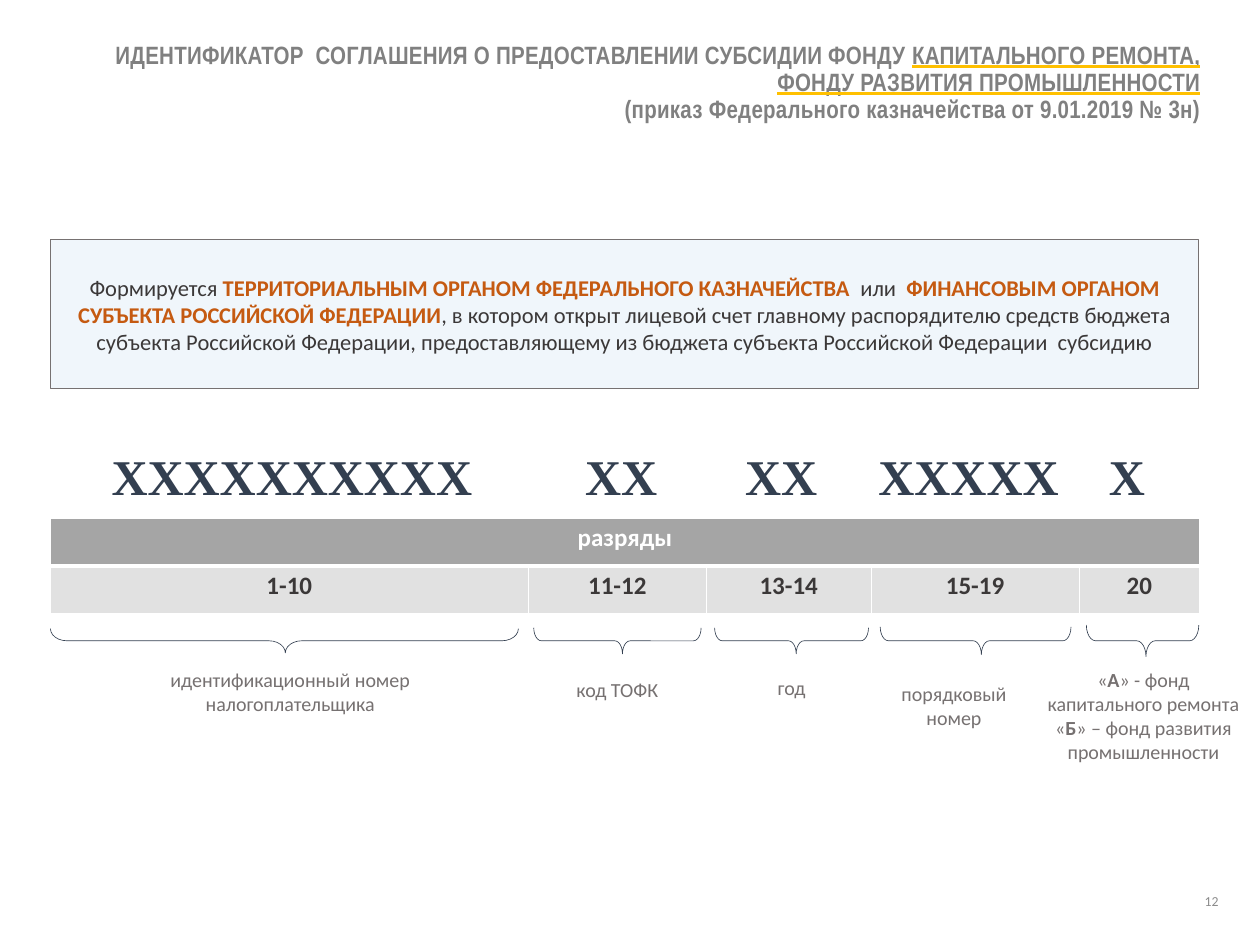
from copy import deepcopy

from lxml import etree
from pptx import Presentation, util as u
from pptx.dml.color import RGBColor
from pptx.enum import shapes, text
from pptx.oxml import ns

WIDTH, HEIGHT = 14, 10.5
LEFT = 0.56
BRACE_MIDDLE = 7.12
COLORS = {
    "title": "808080", "underline": "FFC000", "label": "767171",
    "number": "8C8C8C", "body": "3B3838", "accent": "C55A11",
    "panel": "DEEBF7", "code": "333F50", "header": "A5A5A5",
    "cell": "E1E1E1", "white": "FFFFFF",
}
COLUMNS = [
    (5.31, "1-10", (0.56, 5.2, 0.27, 0.678, 0.498)),
    (1.98, "11-12", (5.93, 1.86, 0.29, 0.294, 0.47)),
    (1.83, "13-14", (7.94, 1.71, 0.29, 0.294, 0.47)),
    (2.31, "15-19", (9.78, 2.12, 0.31, 0.294, 0.47)),
    (1.34, "20", (12.07, 1.25, 0.35, 0.294, 0.47)),
]
CODE_STOPS = [
    (0.56, "ХХХХХХХХХХ"), (5.82, "ХХ"), (7.6, "ХХ"),
    (9.08, "ХХХХХ"), (11.64, "Х"),
]
LABELS = [
    ((0.95, 7.36, 4.55, 0.66), [[("идентификационный номер налогоплательщика", False)]]),
    ((5.93, 7.47, 1.86, 0.39), [[("код ТОФК", False)]]),
    ((8.04, 7.45, 1.51, 0.39), [[("год", False)]]),
    ((9.79, 7.51, 1.62, 0.93), [[("порядковый", False)], [("номер", False)]]),
    ((11.41, 7.36, 2.59, 1.2), [
        [("«", False), ("А", True), ("» - фонд капитального ремонта", False)],
        [("«", False), ("Б", True), ("» – фонд развития промышленности", False)],
    ]),
]


def rgb(name):
    return RGBColor.from_string(COLORS[name])


def inches(*lengths):
    return [u.Inches(length) for length in lengths]


def add_child(parent, tag, **attributes):
    return etree.SubElement(parent, ns.qn(tag), attributes)


def add_solid(parent, color):
    add_child(add_child(parent, "a:solidFill"), "a:srgbClr", val=COLORS[color])


def add_span(para, words, size, color, bold=False, font="Calibri"):
    span = para.add_run()
    span.text = words
    span.font.size = u.Pt(size)
    span.font.name = font
    span.font.bold = bold
    span.font.color.rgb = rgb(color)
    return span


def set_frame(box, anchor=text.MSO_ANCHOR.TOP):
    frame = box.text_frame
    frame.word_wrap = True
    frame.vertical_anchor = anchor
    frame.margin_left = frame.margin_right = u.Inches(0.12)
    frame.margin_top = frame.margin_bottom = u.Inches(0.06)
    return frame


def add_title(page):
    title = page.shapes.title
    title.left, title.top, title.width, title.height = inches(0.63, 0.39, 12.83, 1.08)
    frame = set_frame(title, text.MSO_ANCHOR.MIDDLE)
    frame.auto_size = text.MSO_AUTO_SIZE.NONE
    para = frame.paragraphs[0]
    para.alignment = text.PP_ALIGN.RIGHT
    para.line_spacing = 0.9
    lines = [
        ("ИДЕНТИФИКАТОР  СОГЛАШЕНИЯ О ПРЕДОСТАВЛЕНИИ СУБСИДИИ ФОНДУ ", False),
        ("КАПИТАЛЬНОГО РЕМОНТА, ФОНДУ РАЗВИТИЯ ПРОМЫШЛЕННОСТИ", True),
        ("(приказ Федерального казначейства от 9.01.2019 № 3н)", False),
    ]
    for words, underlined in lines:
        span = add_span(para, words, 20, "title", True, "Arial Narrow")
        span.font.underline = underlined
        properties = span.font._element
        properties.set("spc", "20")
        if underlined:
            fill = etree.Element(ns.qn("a:uFill"))
            add_solid(fill, "underline")
            properties.find(ns.qn("a:latin")).addprevious(fill)
            para.add_line_break()
            para._p[-1].append(deepcopy(properties))


def add_panel(page):
    panel = page.shapes.add_shape(
        shapes.MSO_SHAPE.RECTANGLE, *inches(LEFT, 2.66, 12.76, 1.66))
    panel.shadow.inherit = False
    panel.fill.solid()
    panel.fill.fore_color.rgb = rgb("panel")
    color = panel._element.spPr.find(ns.qn("a:solidFill"))[0]
    add_child(color, "a:alpha", val="44000")
    panel.line.color.rgb = rgb("label")
    panel.line.width = u.Pt(1)
    para = set_frame(panel, text.MSO_ANCHOR.MIDDLE).paragraphs[0]
    para.alignment = text.PP_ALIGN.CENTER
    for words, accent in [
        ("Формируется ", False),
        ("ТЕРРИТОРИАЛЬНЫМ ОРГАНОМ ФЕДЕРАЛЬНОГО КАЗНАЧЕЙСТВА  ", True),
        ("или  ", False),
        ("ФИНАНСОВЫМ ОРГАНОМ СУБЪЕКТА РОССИЙСКОЙ ФЕДЕРАЦИИ", True),
        (", в котором открыт лицевой счет главному распорядителю средств бюджета "
         "субъекта Российской Федерации, предоставляющему из бюджета субъекта "
         "Российской Федерации  субсидию", False),
    ]:
        add_span(para, words, 18, "accent" if accent else "body", accent)


def add_code(page):
    box = page.shapes.add_textbox(*inches(LEFT, 4.7, 12.61, 1.03))
    para = set_frame(box).paragraphs[0]
    stops = add_child(para._p.get_or_add_pPr(), "a:tabLst")
    for position, _ in CODE_STOPS:
        add_child(stops, "a:tab", pos=str(u.Inches(position)), algn="l")
    add_span(para, "\t", 54, "code", font="Times New Roman")
    groups = "\t".join(group for _, group in CODE_STOPS)
    add_span(para, groups, 40, "code", True, "Times New Roman")


def format_cell(cell, words, text_color, fill_color, bottom):
    cell.fill.solid()
    cell.fill.fore_color.rgb = rgb(fill_color)
    properties = cell._tc.tcPr
    for index, (side, width) in enumerate(
            [("L", 1), ("R", 1), ("T", 1), ("B", bottom)]):
        line = etree.Element(ns.qn("a:ln" + side), w=str(u.Pt(width)))
        add_solid(line, "white")
        properties.insert(index, line)
    para = cell.text_frame.paragraphs[0]
    para.alignment = text.PP_ALIGN.CENTER
    if words:
        add_span(para, words, 20, text_color, True)


def add_digits_table(page):
    table = page.shapes.add_table(
        2, len(COLUMNS), *inches(LEFT, 5.76, 12.77, 1.06)).table
    table.horz_banding = False
    for index, (width, digits, _) in enumerate(COLUMNS):
        table.columns[index].width = u.Inches(width)
        heading = "" if index else "разряды"
        format_cell(table.cell(0, index), heading, "white", "header", 3)
        format_cell(table.cell(1, index), digits, "body", "cell", 1)
    table.cell(0, 0).merge(table.cell(0, len(COLUMNS) - 1))


def add_brace(page, left, span, depth, curve, point):
    brace = page.shapes.add_shape(
        shapes.MSO_SHAPE.RIGHT_BRACE,
        *inches(left + (span - depth) / 2, BRACE_MIDDLE - span / 2, depth, span))
    brace.rotation = 90
    brace.adjustments[0] = curve
    brace.adjustments[1] = point
    brace.shadow.inherit = False
    brace.fill.background()
    brace.line.color.rgb = rgb("code")
    brace.line.width = u.Pt(0.5)


def add_label(page, area, lines):
    frame = set_frame(page.shapes.add_textbox(*inches(*area)))
    for index, spans in enumerate(lines):
        para = frame.add_paragraph() if index else frame.paragraphs[0]
        para.alignment = text.PP_ALIGN.CENTER
        for words, bold in spans:
            add_span(para, words, 16, "label", bold)


def add_page_number(page):
    box = page.shapes.add_textbox(*inches(13.06, 9.73, 0.6, 0.56))
    para = set_frame(box, text.MSO_ANCHOR.MIDDLE).paragraphs[0]
    para.alignment = text.PP_ALIGN.RIGHT
    add_span(para, "12", 11, "number")


def main():
    deck = Presentation()
    deck.slide_width, deck.slide_height = inches(WIDTH, HEIGHT)
    page = deck.slides.add_slide(deck.slide_layouts.get_by_name("Title Only"))
    add_title(page)
    add_panel(page)
    add_code(page)
    add_digits_table(page)
    for _, _, brace in COLUMNS:
        add_brace(page, *brace)
    for area, lines in LABELS:
        add_label(page, area, lines)
    add_page_number(page)
    deck.save("out.pptx")


if __name__ == "__main__":
    main()
